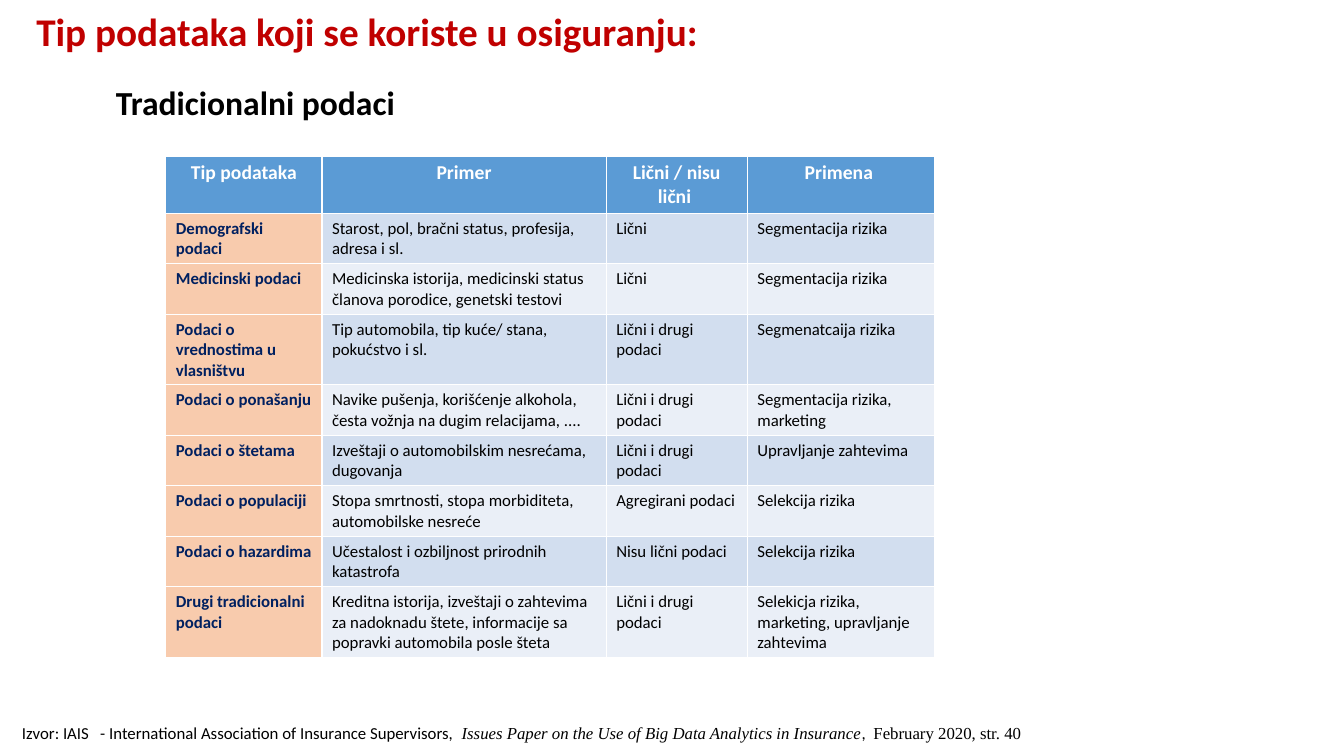
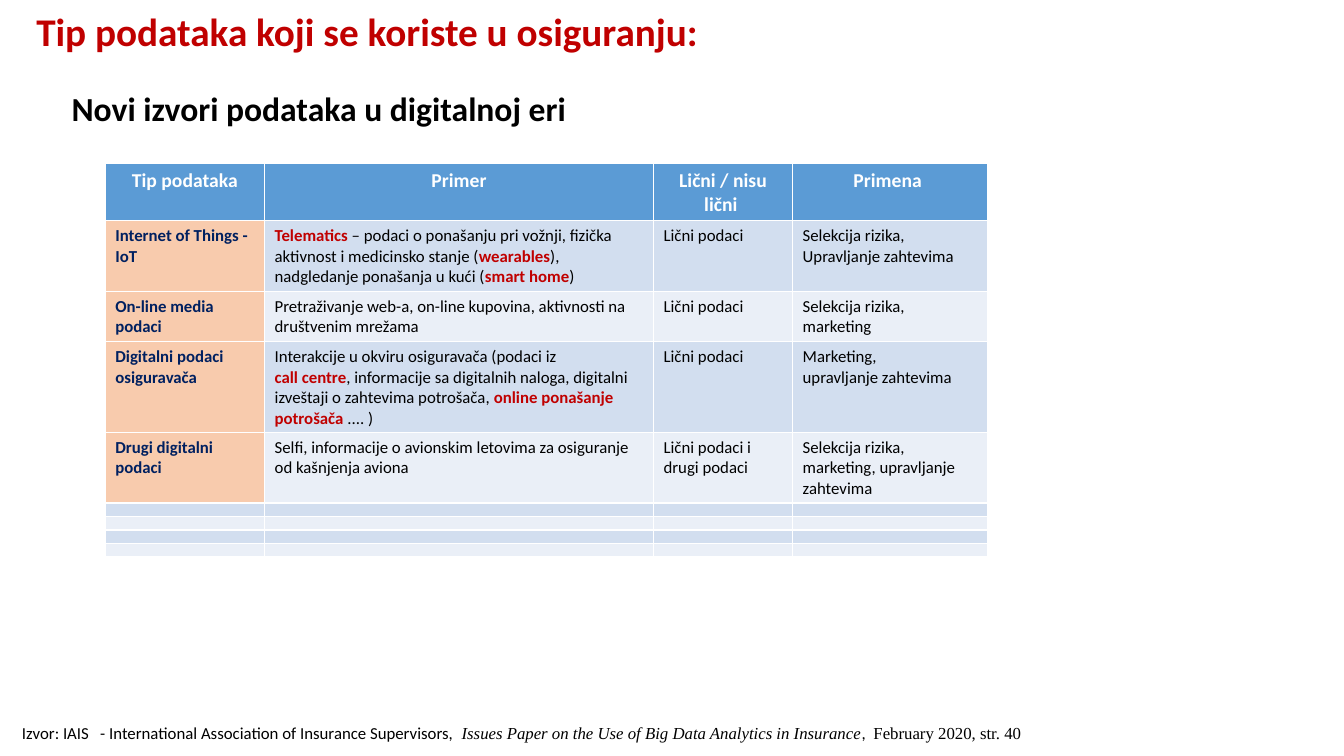
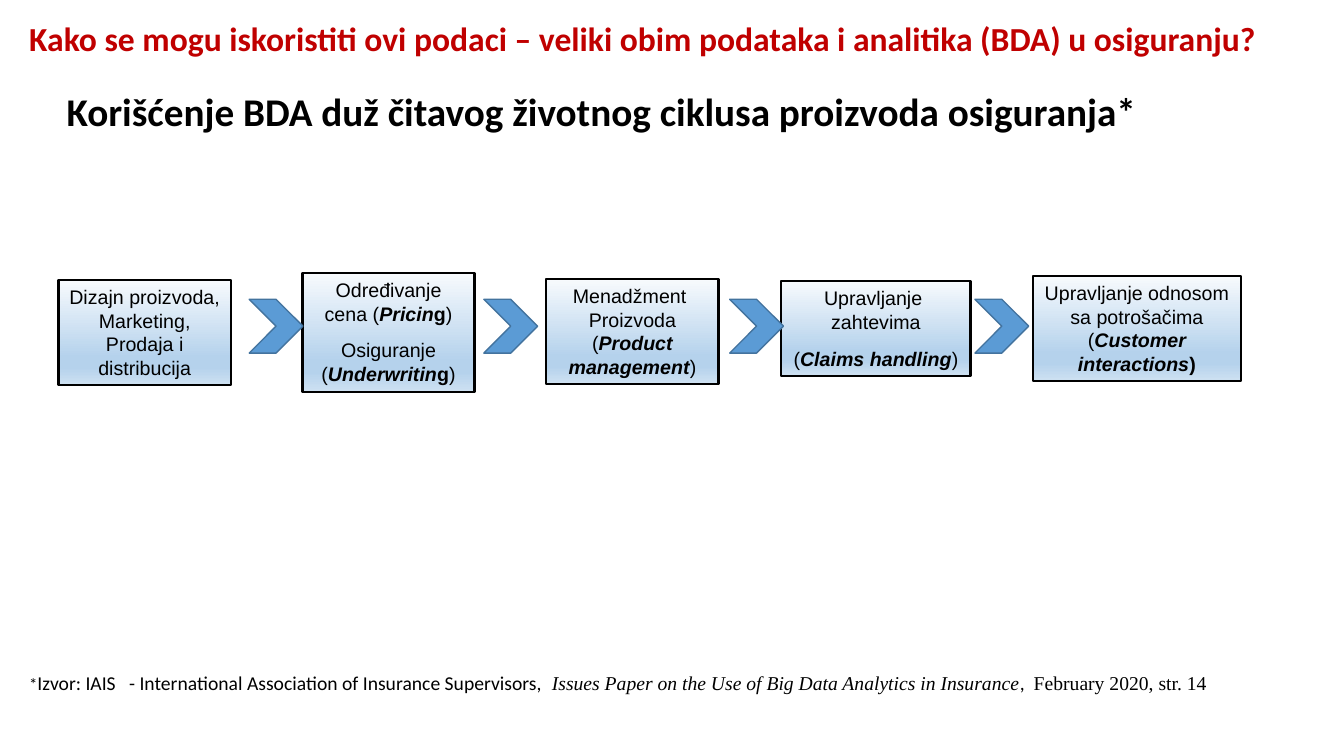
from lxml import etree
from pptx import Presentation
from pptx.dml.color import RGBColor
from pptx.enum.shapes import MSO_SHAPE
from pptx.enum.text import MSO_ANCHOR, MSO_AUTO_SIZE, PP_ALIGN
from pptx.oxml.ns import qn
from pptx.util import Pt

RECT, CHEVRON = MSO_SHAPE.RECTANGLE, MSO_SHAPE.CHEVRON
TOP, MIDDLE = MSO_ANCHOR.TOP, MSO_ANCHOR.MIDDLE
LEFT, CENTER = PP_ALIGN.LEFT, PP_ALIGN.CENTER
FIXED = MSO_AUTO_SIZE.NONE

RED = RGBColor(0xC0, 0x00, 0x00)
BLACK = RGBColor(0x00, 0x00, 0x00)
WHITE = RGBColor(0xFF, 0xFF, 0xFF)
NAVY = RGBColor(0x00, 0x20, 0x60)
BLUE = RGBColor(0x5B, 0x9B, 0xD5)
EDGE = RGBColor(0x43, 0x73, 0x9E)
PEACH = RGBColor(0xF8, 0xCB, 0xAD)
BANDS = [RGBColor(0xD2, 0xDE, 0xEF), RGBColor(0xEA, 0xEF, 0xF7)]
STOPS = [
    (0, RGBColor(0xF7, 0xFA, 0xFD)),
    (74, RGBColor(0xB5, 0xD2, 0xEC)),
    (83, RGBColor(0xB5, 0xD2, 0xEC)),
    (100, RGBColor(0xCE, 0xE1, 0xF2)),
]
SANS, SERIF, PLAIN = "Calibri", "Times New Roman", "Arial"


def add_run(par, text, size, color=BLACK, bold=False, ital=False, face=SANS):
    run = par.add_run()
    run.text = text
    font = run.font
    font.name, font.size = face, Pt(size)
    font.bold, font.italic = bold, ital
    font.color.rgb = color


def place(shape, left, top, width, height):
    shape.left, shape.top = Pt(left), Pt(top)
    shape.width, shape.height = Pt(width), Pt(height)


KINDS = "Tip podataka koji se koriste u osiguranju:"
pages = [
    {
        "title": (KINDS, 28, (18.7, 0, 828, 48.2)),
        "head": ("Tradicionalni podaci", 24, (75.6, 58.3, 448.6, 21)),
        "note": ("", 12, "40", (8.6, 512, 907, 22.3)),
    },
    {
        "title": (KINDS, 28, (18.7, 0, 828, 48.2)),
        "head": ("Novi izvori podataka u digitalnoj eri", 24, (43.9, 62.6, 448.6, 21)),
        "note": ("", 12, "40", (8.6, 512, 907, 22.3)),
    },
    {
        "title": (
            "Kako se mogu iskoristiti ovi podaci – veliki obim podataka i analitika (BDA) u osiguranju?",
            24, (13.7, 1.5, 946.3, 55)),
        "head": (
            "Korišćenje BDA duž čitavog životnog ciklusa proizvoda osiguranja*",
            28, (40.3, 62.6, 861, 77.8)),
        "note": ("*", 14, "14", (13.7, 474.5, 915, 25.2)),
    },
]

deck = Presentation()
deck.slide_width, deck.slide_height = Pt(960), Pt(540)
slides = []
for page in pages:
    slide = deck.slides.add_slide(deck.slide_layouts[1])
    slides.append(slide)

    text, size, spot = page["title"]
    title = slide.shapes.title
    place(title, *spot)
    frame = title.text_frame
    frame.auto_size, frame.vertical_anchor = FIXED, MIDDLE
    par = frame.paragraphs[0]
    par.alignment, par.line_spacing = LEFT, 0.9
    add_run(par, text, size, RED, True)

    text, size, spot = page["head"]
    head = slide.placeholders[1]
    place(head, *spot)
    frame = head.text_frame
    frame.auto_size, frame.vertical_anchor = FIXED, TOP
    par = frame.paragraphs[0]
    par.line_spacing, par.space_before = 0.9, Pt(10)
    props = par._p.get_or_add_pPr()
    props.set("marL", "0")
    props.set("indent", "0")
    etree.SubElement(props, qn("a:buNone"))
    add_run(par, text, size, bold=True)

    star, size, leaf, spot = page["note"]
    note = slide.shapes.add_textbox(*map(Pt, spot))
    note.text_frame.word_wrap = True
    par = note.text_frame.paragraphs[0]
    par.line_spacing, par.space_after = 1.07, Pt(8)
    if star:
        add_run(par, star, 12)
    add_run(par, "Izvor: IAIS   - International Association of Insurance Supervisors, ", size)
    add_run(par, " Issues Paper on the Use of Big Data Analytics in Insurance", size, ital=True, face=SERIF)
    add_run(par, ",  ", size)
    add_run(par, "February 2020, str. " + leaf, size, face=SERIF)

HEADS = ("Tip podataka", "Primer", "Lični / nisu lični ", "Primena ")
BLANK = (0, "", "", "", "")
old_rows = [
    (2, "Demografski\npodaci", "Starost, pol, bračni status, profesija, adresa i sl.",
     "Lični", "Segmentacija rizika"),
    (2, "Medicinski podaci",
     "Medicinska istorija, medicinski status članova porodice, genetski testovi",
     "Lični", "Segmentacija rizika"),
    (3, "Podaci o vrednostima u vlasništvu",
     "Tip automobila, tip kuće/ stana, pokućstvo i sl.",
     "Lični i drugi podaci", "Segmenatcaija rizika"),
    (2, "Podaci o ponašanju",
     "Navike pušenja, korišćenje alkohola, česta vožnja na dugim relacijama, ....",
     "Lični i drugi podaci", "Segmentacija rizika, marketing"),
    (2, "Podaci o štetama", "Izveštaji o automobilskim nesrećama,\ndugovanja",
     "Lični i drugi podaci", "Upravljanje zahtevima"),
    (2, "Podaci o populaciji", "Stopa smrtnosti, stopa morbiditeta, automobilske nesreće",
     "Agregirani podaci", "Selekcija rizika"),
    (2, "Podaci o hazardima", "Učestalost i ozbiljnost prirodnih katastrofa",
     "Nisu lični podaci", "Selekcija rizika"),
    (3, "Drugi tradicionalni podaci",
     "Kreditna istorija, izveštaji o zahtevima za nadoknadu štete, informacije sa popravki automobila posle šteta",
     "Lični i drugi podaci", "Selekicja rizika, marketing, upravljanje zahtevima"),
]
new_rows = [
    (3, "Internet of Things - IoT",
     "|Telematics| – podaci o ponašanju pri vožnji, fizička aktivnost i medicinsko stanje "
     "(|wearables|), nadgledanje ponašanja u kući (|smart home|)",
     "Lični podaci", "Selekcija rizika,\nUpravljanje zahtevima"),
    (2, "On-line media podaci",
     "Pretraživanje web-a, on-line kupovina, aktivnosti na društvenim mrežama",
     "Lični podaci", "Selekcija rizika, marketing"),
    (4, "Digitalni podaci osiguravača",
     "Interakcije u okviru osiguravača (podaci iz\n|call centre|, informacije sa digitalnih naloga, "
     "digitalni izveštaji o zahtevima potrošača, |online ponašanje potrošača |.... )",
     "Lični podaci", "Marketing,\nupravljanje zahtevima"),
    (3, "Drugi digitalni podaci",
     "Selfi, informacije o avionskim letovima za osiguranje od kašnjenja aviona",
     "Lični podaci i drugi podaci", "Selekcija rizika, marketing, upravljanje zahtevima"),
] + [BLANK] * 4
grids = [
    (slides[0], 118.4, 111.6, (111.6, 203, 100.8, 134), old_rows),
    (slides[1], 75.2, 116.8, (113.8, 277.8, 99.4, 139), new_rows),
]
for slide, left, top, widths, rows in grids:
    rows = [(2, *HEADS)] + rows
    sizes = [14] + [12 if row[0] else 2 for row in rows[1:]]
    tall = [7.2 + 1.2 * size * max(row[0], 1) for size, row in zip(sizes, rows)]
    table = slide.shapes.add_table(
        len(rows), 4, Pt(left), Pt(top), Pt(sum(widths)), Pt(sum(tall))).table
    for col, width in zip(table.columns, widths):
        col.width = Pt(width)
    for r, (lines, *texts) in enumerate(rows):
        table.rows[r].height = Pt(tall[r])
        for c, text in enumerate(texts):
            cell = table.cell(r, c)
            first = c == 0 and lines > 0
            ink, fill = BLACK, BANDS[(r + 1) % 2]
            if r == 0:
                ink, fill = WHITE, BLUE
            elif first:
                ink, fill = NAVY, PEACH
            cell.fill.solid()
            cell.fill.fore_color.rgb = fill
            for n, line in enumerate(text.split("\n")):
                frame = cell.text_frame
                par = frame.add_paragraph() if n else frame.paragraphs[0]
                par.alignment = LEFT if r else CENTER
                if not line:
                    end = etree.SubElement(par._p, qn("a:endParaRPr"))
                    end.set("sz", str(sizes[r] * 100))
                for k, part in enumerate(line.split("|")):
                    if part:
                        mark = k % 2 == 1
                        add_run(par, part, sizes[r], RED if mark else ink, mark or r == 0 or first)

flow = slides[2].shapes
steps = [
    ((41.8, 200.2, 123.1, 74.9), [
        (0, [("Dizajn proizvoda,", False, False)]),
        (0, [("Marketing,", False, False)]),
        (0, [("Prodaja i distribucija", False, False)])]),
    ((216, 195.1, 123.1, 85), [
        (0, [("Određivanje cena (", False, False), ("Pricin", True, True),
             ("g", True, False), (")", False, False)]),
        (9.4, [("Osiguranje (", False, False), ("Underwritin", True, True),
               ("g", True, False), (")", False, False)])]),
    ((390.2, 199.4, 123.1, 74.9), [
        (0, [("Menadžment ", False, False)]),
        (0, [("Proizvoda", False, False)]),
        (0, [("(", False, False), ("Product management", True, True), (")", False, False)])]),
    ((558, 200.9, 135.4, 67.7), [
        (0, [("Upravljanje ", False, False)]),
        (0, [("zahtevima", False, False)]),
        (9.4, [("(", False, False), ("Claims handling", True, True), (")", False, False)])]),
    ((738, 197.3, 148.3, 74.9), [
        (0, [("Upravljanje odnosom sa potrošačima (", False, False),
             ("Customer interactions", True, True), (")", True, False)])]),
]
for spot, pars in steps:
    box = flow.add_shape(RECT, *map(Pt, spot))
    box.shadow.inherit = False
    box.line.color.rgb, box.line.width = BLACK, Pt(1.75)
    box.fill.gradient()
    box.fill.gradient_angle = 270
    stops = box._element.spPr.find(".//" + qn("a:gsLst"))
    for stop in list(stops):
        stops.remove(stop)
    for pos, tint in STOPS:
        stop = etree.SubElement(stops, qn("a:gs"), pos=str(pos * 1000))
        etree.SubElement(stop, qn("a:srgbClr"), val=str(tint))
    frame = box.text_frame
    frame.word_wrap, frame.vertical_anchor = True, TOP
    for n, (gap, runs) in enumerate(pars):
        par = frame.add_paragraph() if n else frame.paragraphs[0]
        par.alignment, par.space_before = CENTER, Pt(gap)
        for text, bold, ital in runs:
            add_run(par, text, 14, BLACK, bold, ital, PLAIN)

for left in (178, 345.6, 521.2, 696.4):
    arrow = flow.add_shape(CHEVRON, Pt(left), Pt(213.8), Pt(38.4), Pt(38.4))
    arrow.shadow.inherit = False
    arrow.fill.solid()
    arrow.fill.fore_color.rgb = BLUE
    arrow.line.color.rgb, arrow.line.width = EDGE, Pt(1)

deck.save("out.pptx")
